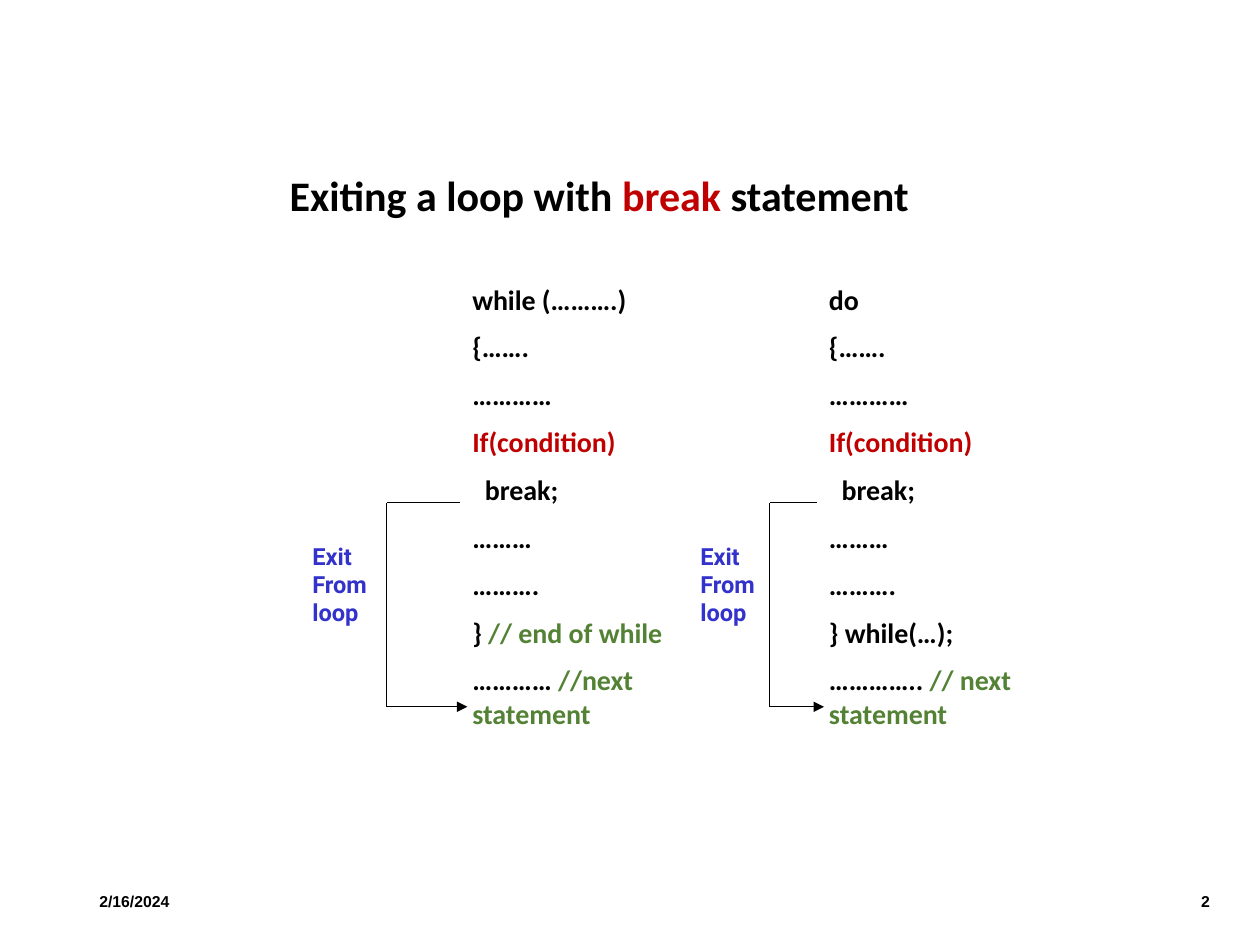
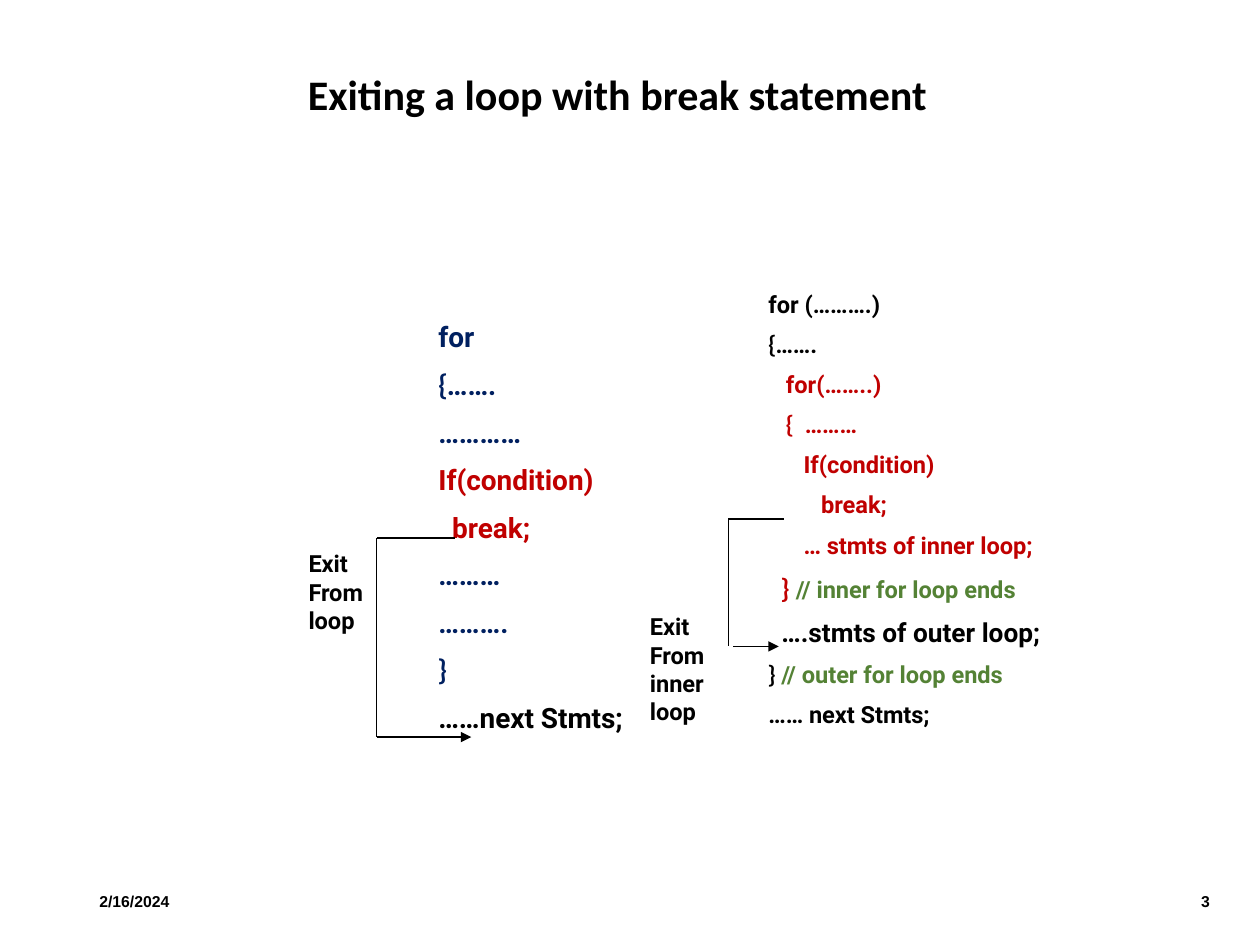
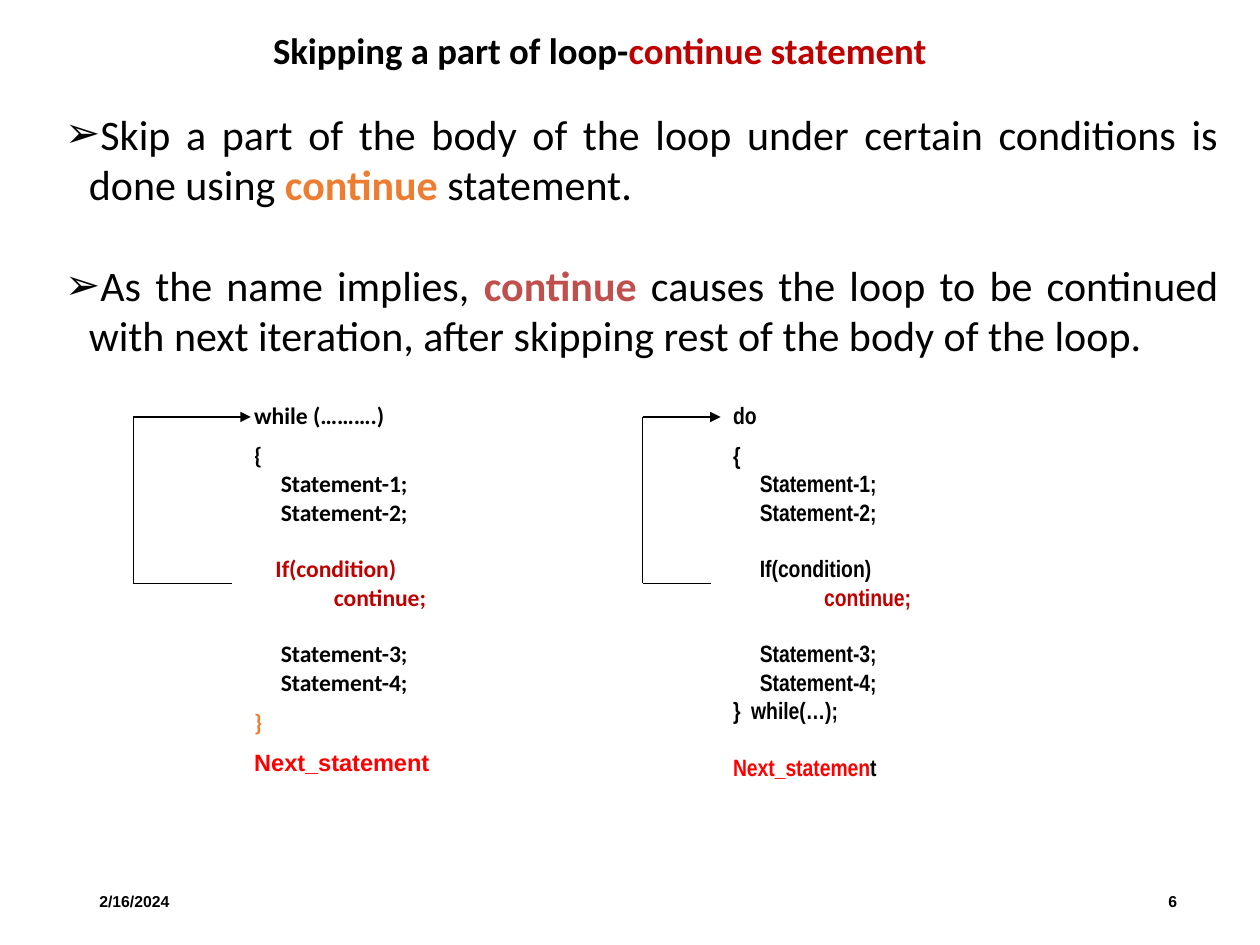
from dataclasses import dataclass
from typing import NamedTuple

from lxml import etree
from pptx import Presentation
from pptx import util as u
from pptx.dml.color import RGBColor
from pptx.enum import shapes, text
from pptx.oxml.ns import qn

Pt = u.Pt
COLORS = {
    "black": "000000", "crimson": "C00000", "green": "548235",
    "blue": "3333CC", "navy": "002060", "orange": "ED7D31",
    "rose": "C0504D", "red": "FF0000",
}
HALF, TIGHT, SKIPPED = 0.5, 0, 1.2  # space before a line, in font sizes
LEFT, CENTER, RIGHT = (text.PP_ALIGN.LEFT, text.PP_ALIGN.CENTER,
                       text.PP_ALIGN.RIGHT)


class Span(NamedTuple):
    text: str
    color: str = "black"
    font: str = ""
    size: float = 0
    bold: bool = True


class Line(NamedTuple):
    spans: tuple[Span, ...]
    gap: float = HALF


@dataclass
class Block:
    left: float
    top: float
    width: float
    height: float
    lines: list[Line]
    font: str = "Calibri"
    size: float = 16
    align: int = LEFT
    middle: bool = False
    wrap: bool = True
    spacing: float = 0
    bullet: str = ""


@dataclass
class Jump:
    """A bracket that leaves a statement and points at where control goes."""
    source_x: float
    source_y: float
    spine_x: float
    target_x: float
    target_y: float
    foot_x: float = 0


def line(content: str, color: str = "black", gap: float = HALF,
         font: str = "", size: float = 0) -> Line:
    return Line((Span(content, color, font, size),), gap)


def draw_block(page, block: Block) -> None:
    box = page.shapes.add_textbox(Pt(block.left), Pt(block.top),
                                  Pt(block.width), Pt(block.height))
    frame = box.text_frame
    frame.word_wrap = block.wrap
    if block.middle:
        frame.vertical_anchor = text.MSO_ANCHOR.MIDDLE
    for index, row in enumerate(block.lines):
        para = frame.add_paragraph() if index else frame.paragraphs[0]
        para.alignment = block.align
        if block.spacing:
            para.line_spacing = block.spacing
        if index:
            size = max(span.size or block.size for span in row.spans)
            para.space_before = Pt(row.gap * size)
        if block.bullet:
            add_bullet(para, block.bullet)
        for span in row.spans:
            run = para.add_run()
            run.text = span.text
            run.font.name = span.font or block.font
            run.font.size = Pt(span.size or block.size)
            run.font.bold = span.bold
            run.font.color.rgb = RGBColor.from_string(COLORS[span.color])


def add_bullet(para, mark: str) -> None:
    props = para._p.get_or_add_pPr()
    props.set("marL", str(Pt(13.5)))
    props.set("indent", str(-Pt(13.5)))
    etree.SubElement(props, qn("a:buFont"), typeface="Arial")
    etree.SubElement(props, qn("a:buChar"), char=mark)


def draw_line(page, start: tuple, end: tuple, arrow: bool = False) -> None:
    edge = page.shapes.add_connector(
        shapes.MSO_CONNECTOR.STRAIGHT, *map(Pt, start + end))
    edge.line.width = Pt(0.75)
    edge.line.color.rgb = RGBColor.from_string(COLORS["black"])
    props = edge._element.spPr
    if arrow:
        etree.SubElement(props.find(qn("a:ln")), qn("a:tailEnd"),
                         type="triangle")
    etree.SubElement(props, qn("a:effectLst"))


def draw_jump(page, jump: Jump) -> None:
    top = (jump.spine_x, jump.source_y)
    draw_line(page, (jump.source_x, jump.source_y), top)
    draw_line(page, top, (jump.spine_x, jump.target_y))
    draw_line(page, (jump.foot_x or jump.spine_x, jump.target_y),
              (jump.target_x, jump.target_y), arrow=True)


def label(left: float, top: float, words: str, color: str) -> Block:
    rows = [line(word, color, TIGHT) for word in words.split()]
    return Block(left, top, 46, 7.2 + 16.2 * len(rows), rows, "Roboto", 13.5,
                 wrap=False)


def title(left: float, top: float, width: float, *spans: Span,
          size: float = 24, align: int = CENTER) -> Block:
    return Block(left, top, width, 40.3, [Line(spans)], size=size,
                 align=align, middle=True, spacing=0.9)


def footer(number: int, right: float) -> list[Block]:
    style = dict(font="Arial", size=9, middle=True)
    return [Block(49.7, 500.4, 68.4, 28.8, [line("2/16/2024")], **style),
            Block(right - 28, 500.4, 28, 28.8, [line(str(number))],
                  align=RIGHT, **style)]


def add_page(deck, blocks: list[Block], jumps: list[Jump]) -> None:
    page = deck.slides.add_slide(deck.slide_layouts[6])
    for block in blocks:
        draw_block(page, block)
    for jump in jumps:
        draw_jump(page, jump)


def break_from_while(deck) -> None:
    body = [line("{……."), line("…………"), line("If(condition)", "crimson"),
            line("  break;"), line("………"), line("……….")]
    while_code = [
        line("while (……….)"), *body,
        Line((Span("} "), Span("// end of while", "green"))),
        Line((Span("………… "), Span("//next statement", "green"))),
    ]
    do_code = [
        line("do"), *body, line("} while(…);"),
        Line((Span("………….. "), Span("// next statement", "green"))),
    ]
    add_page(deck, [
        title(158.4, 92.9, 396, Span("Exiting a loop with "),
              Span("break", "crimson"), Span(" statement"), align=LEFT),
        *footer(2, 698.4),
        Block(262.8, 157.7, 133.9, 298, while_code),
        Block(466.6, 157.7, 145.4, 298, do_code),
        label(171.4, 306, "Exit From loop", "blue"),
        label(393.1, 306, "Exit From loop", "blue"),
    ], [
        Jump(262.8, 287.3, 221, 267.1, 403.9),
        Jump(466.6, 287.3, 439.9, 470.9, 403.9),
    ])


def break_from_for(deck) -> None:
    for_code = [
        line("for", "navy"),
        Line((Span("{", "navy", "Lato"), Span("…….", "navy"))),
        line("…………", "navy"),
        line("If(condition)", "crimson"),
        line("  break;", "crimson"),
        line("………", "navy"),
        line("……….", "navy"),
        line("}", "navy", font="Lato"),
        line("……next Stmts;"),
    ]
    nested_code = [
        line("for (……….)"),
        Line((Span("{", font="Lato"), Span("……."))),
        line("   for(……..)", "crimson"),
        Line((Span("   ", "crimson"), Span("{", "crimson", "Lato"),
              Span("  ………", "crimson"))),
        line("      If(condition)", "crimson"),
        line("         break;", "crimson"),
        line("      … stmts of inner loop;", "crimson"),
        Line((Span("  ", "crimson", size=15),
              Span("} ", "crimson", "Lato", 15),
              Span("// inner for loop ends", "green"))),
        line("  ….stmts of outer loop;", size=15),
        Line((Span("} ", font="Lato"),
              Span("// outer for loop ends", "green"))),
        line("…… next Stmts;"),
    ]
    add_page(deck, [
        title(141.1, 35.3, 423.4, Span("Exiting a loop with break statement")),
        *footer(3, 698.4),
        Block(243.4, 179.3, 157.7, 259.2, for_code, "Roboto"),
        Block(432, 162, 171.4, 274.3, nested_code, "Roboto", 13.5),
        label(169.2, 310.3, "Exit From loop", "black"),
        label(364.3, 346.3, "Exit From inner loop", "black"),
    ], [
        Jump(259.9, 307.4, 215.3, 269.3, 421.2),
        Jump(447.8, 296.6, 416.2, 445, 369.4, foot_x=419),
    ])


def skip_with_continue(deck) -> None:
    def statements(first: int, gap: float) -> list[Line]:
        return [line(f"     Statement-{first};", gap=gap),
                line(f"     Statement-{first + 1};", gap=TIGHT)]

    while_code = [
        line("while (……….)"), line("{"), *statements(1, TIGHT),
        line("    If(condition)", "crimson", SKIPPED),
        line("               continue;", "crimson", TIGHT),
        *statements(3, SKIPPED),
        line("}", "orange"),
        line("Next_statement", "red", font="Arial"),
    ]
    do_code = [
        line("do"), line("{"), *statements(1, TIGHT),
        line("     If(condition)", gap=SKIPPED),
        line("                 continue;", "crimson", TIGHT),
        *statements(3, SKIPPED),
        line("}  while(…);", gap=TIGHT),
        Line((Span("Next_statemen", "red"), Span("t")), SKIPPED),
    ]
    points = [
        Line((Span("Skip a part of the body of the loop under certain "
                   "conditions is done using ", bold=False),
              Span("continue", "orange"), Span(" statement.", bold=False))),
        Line((Span("As the name implies, ", bold=False),
              Span("continue ", "rose"),
              Span("causes the loop to be continued with next iteration, "
                   "after skipping rest of the body of the loop.",
                   bold=False)), SKIPPED),
    ]
    add_page(deck, [
        title(104.4, 10.1, 476.6, Span("Skipping a part of loop-"),
              Span("continue statement", "crimson"), size=21),
        *footer(6, 679.7),
        Block(138.2, 225.4, 195.8, 228.2, while_code, size=13.5),
        Block(411.8, 225.4, 195.8, 228.2, do_code, "Arial Narrow", 13.5),
        Block(30.2, 58.3, 673.2, 152.6, points, size=24,
              align=text.PP_ALIGN.JUSTIFY, bullet="➢"),
    ], [
        Jump(132.5, 333.4, 76.3, 143.3, 238.3),
        Jump(406.1, 333.4, 367.2, 411.8, 238.3),
    ])


def main() -> None:
    deck = Presentation()
    deck.slide_width, deck.slide_height = Pt(720), Pt(540)
    break_from_while(deck)
    break_from_for(deck)
    skip_with_continue(deck)
    deck.save("out.pptx")


if __name__ == "__main__":
    main()
